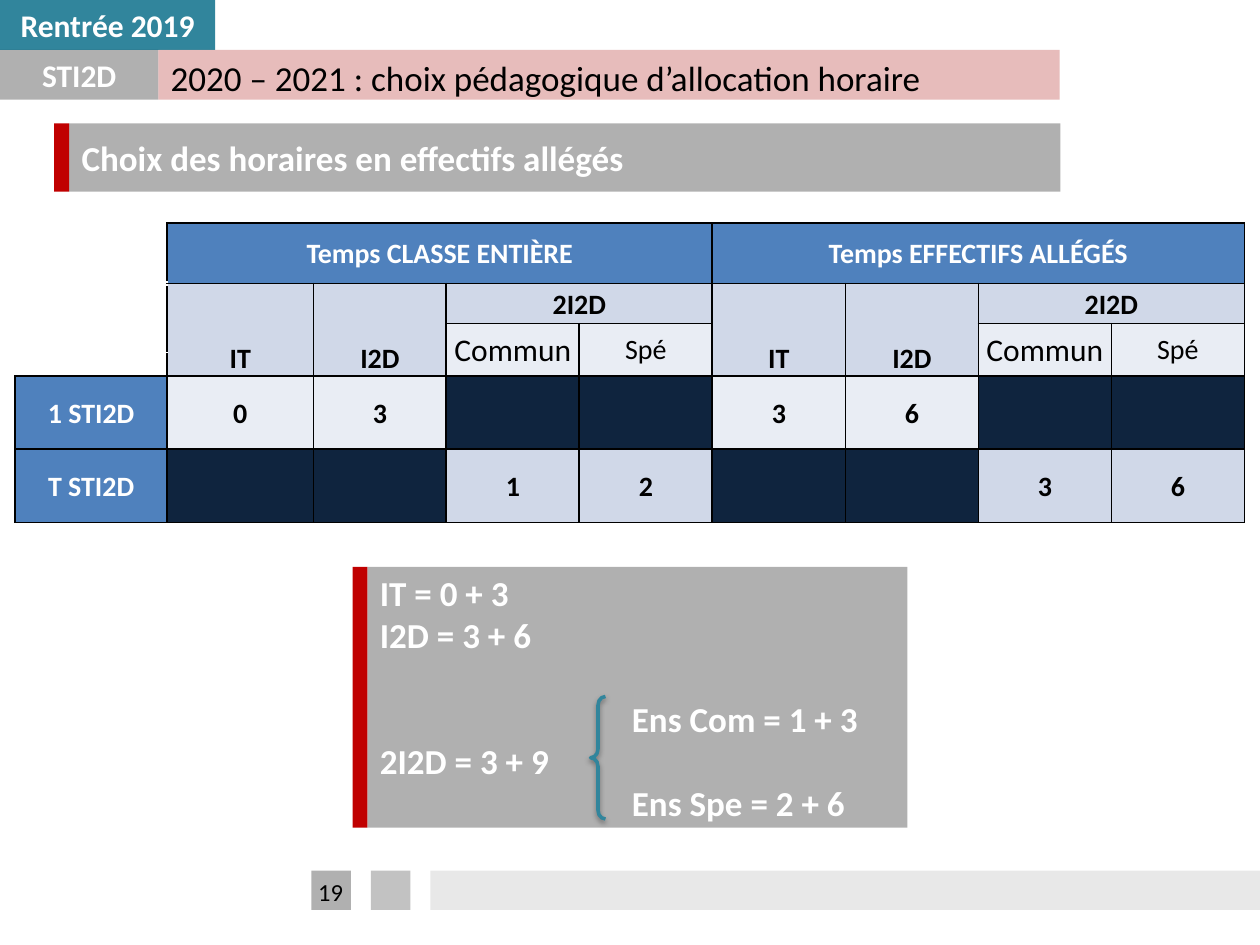
import pptx
import pptx.util
import pptx.dml.color
import pptx.enum.shapes
import pptx.enum.text
import pptx.oxml.ns
import lxml.etree

Pt = pptx.util.Pt
RGB = pptx.dml.color.RGBColor
FORM = pptx.enum.shapes.MSO_SHAPE
ALIGN = pptx.enum.text.PP_ALIGN
MID = pptx.enum.text.MSO_ANCHOR.MIDDLE
LOW = pptx.enum.text.MSO_ANCHOR.BOTTOM

BLACK = RGB(0x00, 0x00, 0x00)
WHITE = RGB(0xFF, 0xFF, 0xFF)
TEAL = RGB(0x31, 0x85, 0x9C)
PINK = RGB(0xD9, 0x96, 0x94)
RED = RGB(0xC0, 0x00, 0x00)
BLUE = RGB(0x4F, 0x81, 0xBD)
NAVY = RGB(0x0F, 0x24, 0x3E)
MIST = RGB(0xD0, 0xD8, 0xE8)
PALE = RGB(0xE9, 0xED, 0xF4)


def put(item, vals):
    for key, val in vals.items():
        setattr(item, key, val)


def node(base, tag, **vals):
    return lxml.etree.SubElement(base, pptx.oxml.ns.qn(tag), vals)


def place(box):
    return [Pt(side) for side in box]


def write(para, text, size, color, bold=False, align=ALIGN.LEFT):
    para.alignment = align
    run = para.add_run()
    run.text = text
    put(run.font, {"name": "Calibri", "size": Pt(size), "bold": bold})
    run.font.color.rgb = color


def block(shapes, box, color, alpha=None):
    """Plain rectangle; alpha is the opacity in percent."""
    rect = shapes.add_shape(FORM.RECTANGLE, *place(box))
    rect.shadow.inherit = False
    rect.line.fill.background()
    rect.fill.solid()
    rect.fill.fore_color.rgb = color
    if alpha:
        tint = rect.fill._xPr.find(".//" + pptx.oxml.ns.qn("a:srgbClr"))
        node(tint, "a:alpha", val=str(alpha * 1000))
    put(rect.text_frame, {"word_wrap": True, "vertical_anchor": MID})
    return rect


def label(shapes, box, text, size, **look):
    area = shapes.add_textbox(*place(box)).text_frame
    area.word_wrap = True
    write(area.paragraphs[0], text, size, BLACK, **look)
    return area


def header(shapes, box):
    left, top, wide, high = box
    half = high / 2
    tag = block(shapes, (left, top, 123, half), TEAL)
    sub = block(shapes, (left, top + half, 90.5, half), BLACK, 31)
    for part, text in ((tag, "Rentrée 2019"), (sub, "STI2D")):
        write(part.text_frame.paragraphs[0], text, 18, WHITE, True, ALIGN.CENTER)
    band = (left + 90.5, top + half, wide - 90.5, half)
    block(shapes, band, PINK, 63)
    title = label(shapes, (band[0], band[1], band[2], 31.5),
                  "2020 – 2021 : choix pédagogique d’allocation horaire", 20)
    title.vertical_anchor = MID


def footer(shapes, box):
    left, top, wide, high = box
    block(shapes, (left, top, high, high), BLACK, 31)
    block(shapes, (left + 34, top, high, high), BLACK, 24)
    block(shapes, (left + 68, top, wide - 68, high), BLACK, 9)
    label(shapes, (left - 9.5, top, 41, 29), "19", 14, align=ALIGN.CENTER)


def panel(shapes, box, lines):
    """Grey panel with a red edge; returns its group."""
    left, top, wide, high = box
    group = shapes.add_group_shape()
    edge = 8.5
    area = block(group.shapes, (left + edge, top, wide - edge, high), BLACK, 31)
    block(group.shapes, (left, top, edge, high), RED)
    frame = area.text_frame
    for pos, (text, gap) in enumerate(lines):
        para = frame.add_paragraph() if pos else frame.paragraphs[0]
        if text.startswith("\t"):
            stops = node(para._p.get_or_add_pPr(), "a:tabLst")
            node(stops, "a:tab", pos=str(Pt(144)), algn="l")
        if gap:
            para.space_before = Pt(gap)
        write(para, text, 20, WHITE, True)
    return group


def sums(shapes, box):
    left, top = box[:2]
    group = panel(shapes, box, [
        ("IT = 0 + 3", 0), ("I2D = 3 + 6", 0), ("\tEns Com = 1 + 3", 24),
        ("2I2D = 3 + 9", 0), ("\tEns Spe = 2 + 6", 0)])
    # Brace with a soft shadow
    brace = group.shapes.add_shape(
        FORM.LEFT_BRACE, *place((left + 136, top + 74, 8.5, 70)))
    brace.adjustments[0] = 0.58
    brace.fill.background()
    brace.line.color.rgb = TEAL
    brace.line.width = Pt(2)
    brace.shadow.inherit = False
    blur = node(brace._element.spPr.find(pptx.oxml.ns.qn("a:effectLst")),
                "a:outerShdw", blurRad=str(Pt(3.1)), dist=str(Pt(1.6)),
                dir="5400000", rotWithShape="0")
    node(node(blur, "a:srgbClr", val="000000"), "a:alpha", val="38000")


def border(cell, row, col):
    """Black grid, heavier around the split columns; white outer corner."""
    heavy = (1, 3, 4, 5)
    corner = col == 0 and row < 4
    outer = WHITE if corner else BLACK
    under = WHITE if corner and row < 3 else BLACK
    sides = {
        "L": (outer, 1.5 if col in heavy else 1),
        "R": (BLACK, 1.5 if col + 1 in heavy else 1),
        "T": (outer, 1),
        "B": (under, 3 if corner and row == 0 else 1),
    }
    prop = cell._tc.get_or_add_tcPr()
    for side, (color, width) in sides.items():
        line = node(prop, "a:ln" + side, w=str(Pt(width)))
        node(node(line, "a:solidFill"), "a:srgbClr", val=str(color))


def hours(shapes, box):
    wides = [87, 83.5] + [76] * 7
    highs = [34.6, 23, 16.4, 13.4, 42, 42]
    grid = shapes.add_table(len(highs), len(wides), *place(box)).table
    put(grid, {"first_row": False, "horz_banding": False})
    for col, wide in zip(grid.columns, wides):
        col.width = Pt(wide)
    for row, high in zip(grid.rows, highs):
        row.height = Pt(high)

    # Text, fill, font colour, size, bold, anchor by cell
    cells = {}
    spans = [(1, 0, 2, 0)]
    names = ("Temps CLASSE ENTIÈRE", "Temps EFFECTIFS ALLÉGÉS")
    for col, name in zip((1, 5), names):
        cells[0, col] = (name, BLUE, WHITE, 16, True, MID)
        cells[1, col] = ("IT", MIST, BLACK, 16, True, LOW)
        cells[1, col + 1] = ("I2D", MIST, BLACK, 16, True, LOW)
        cells[1, col + 2] = ("2I2D", MIST, BLACK, 16, True, MID)
        cells[2, col + 2] = ("Commun", PALE, BLACK, 18, False, MID)
        cells[2, col + 3] = ("Spé", PALE, BLACK, 16, False, MID)
        spans += [(0, col, 0, col + 3), (1, col + 2, 1, col + 3)]
        spans += [(1, col + k, 3, col + k) for k in (0, 1)]
        spans += [(2, col + k, 3, col + k) for k in (2, 3)]
    data = {4: ("1 STI2D", PALE, {1: "0", 2: "3", 5: "3", 6: "6"}),
            5: ("T STI2D", MIST, {3: "1", 4: "2", 7: "3", 8: "6"})}
    for row, (name, fill, vals) in data.items():
        cells[row, 0] = (name, BLUE, WHITE, 16, True, MID)
        for col in range(1, 9):
            text = vals.get(col)
            cells[row, col] = (text, fill if text else NAVY, BLACK, 16, True, MID)

    for row in range(len(highs)):
        for col in range(len(wides)):
            cell = grid.cell(row, col)
            text, fill, color, size, bold, anchor = cells.get(
                (row, col), (None, None, BLACK, 16, False, MID))
            put(cell, {"margin_left": Pt(3.6), "margin_right": Pt(3.6),
                       "margin_top": 0, "margin_bottom": 0,
                       "vertical_anchor": anchor})
            border(cell, row, col)
            if fill is None:
                cell.fill.background()
            else:
                cell.fill.solid()
                cell.fill.fore_color.rgb = fill
            para = cell.text_frame.paragraphs[0]
            if text:
                write(para, text, size, color, bold, ALIGN.CENTER)
                para.line_spacing = 1.0 if text == "Spé" else 1.07
            else:
                node(para._p, "a:endParaRPr", sz="400")
    for top, left, low, right in spans:
        grid.cell(top, left).merge(grid.cell(low, right))


def main():
    deck = pptx.Presentation()
    put(deck, {"slide_width": Pt(720), "slide_height": Pt(540)})
    shapes = deck.slides.add_slide(deck.slide_layouts[6]).shapes
    header(shapes, (0, 0, 605.5, 57))
    footer(shapes, (178, 497.5, 542, 22.5))
    hours(shapes, (8.6, 127.4, 702.5, 171.4))
    panel(shapes, (31, 70.5, 575, 39),
          [("Choix des horaires en effectifs allégés", 0)])
    sums(shapes, (201.5, 324, 317, 149))
    deck.save("out.pptx")


if __name__ == "__main__":
    main()
